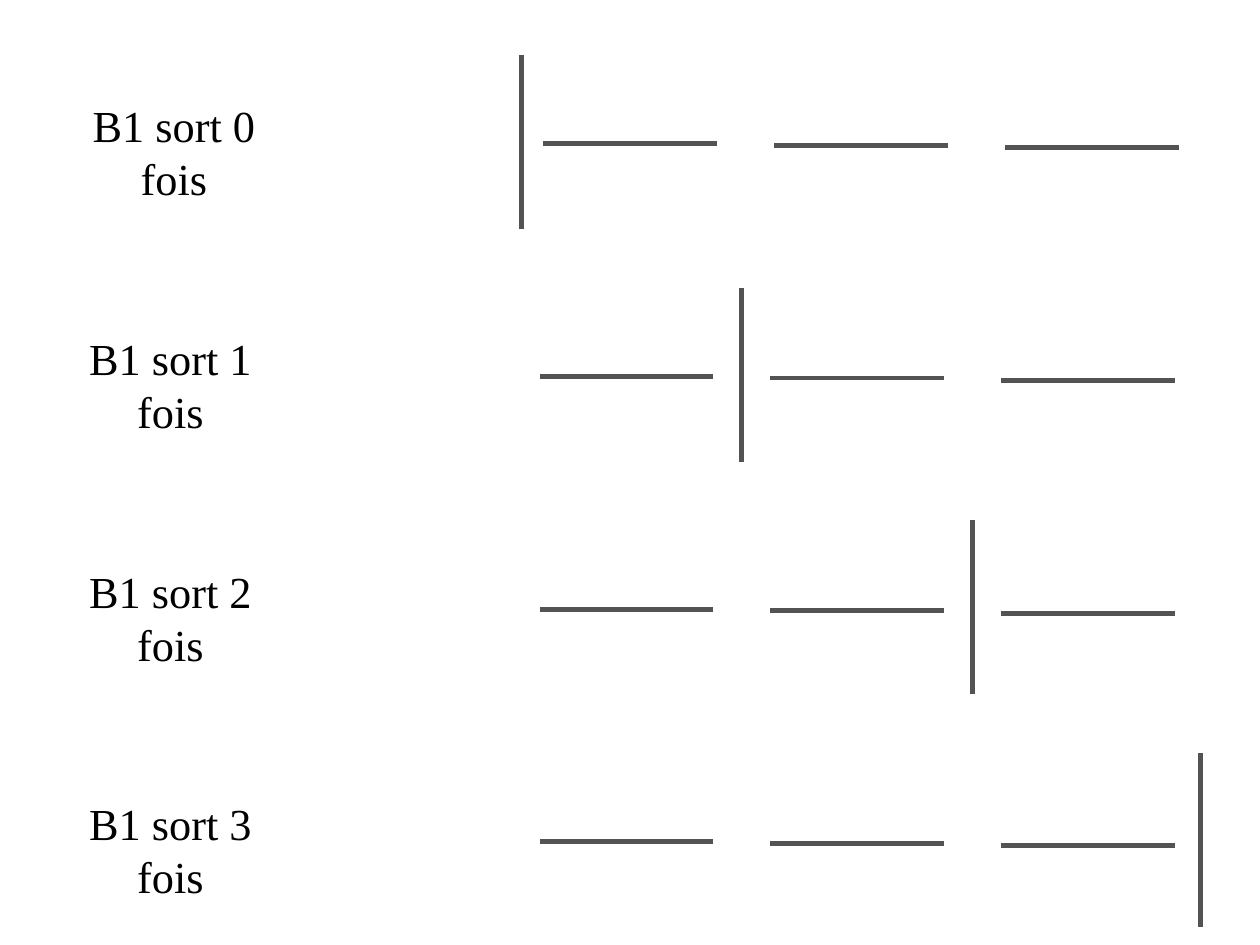
import pptx
import pptx.dml.color
import pptx.enum.shapes
import pptx.enum.text
import pptx.oxml.ns
import pptx.util
from lxml import etree

Pt = pptx.util.Pt

GREY = pptx.dml.color.RGBColor(0x53, 0x53, 0x53)
BLACK = pptx.dml.color.RGBColor(0, 0, 0)

# Lengths in points
ROW_PITCH = 189.1
FIRST_DASH_LEFT = 441.4
FIRST_ROW_SHIFT = 2.9
DASH_PITCH = 187.6
DASH_TOP = 116.8
DASH_DROPS = (0, 1.3, 3.4)
LINE_LENGTH = 141.2
BAR_TOP = 44.8
BAR_LEFTS = (424.1, 602.6, 790.6, 975.6)
LABEL_LEFT = 66.4
LABEL_TOP = 76.3


def add_line(shapes, left, top, width=0, height=0):
    """Draw a straight grey line without shadow."""
    line = shapes.add_connector(
        pptx.enum.shapes.MSO_CONNECTOR.STRAIGHT,
        Pt(left), Pt(top), Pt(left + width), Pt(top + height))
    line.line.color.rgb = GREY
    line.line.width = Pt(4)
    properties = line.element.find(pptx.oxml.ns.qn("p:spPr"))
    etree.SubElement(properties, pptx.oxml.ns.qn("a:effectLst"))


def add_text(shapes, text, left, top, width, height, *, size=36,
             font="Times New Roman", color=BLACK, spacing=43, inset=4.5):
    """Place centred text that wraps inside its box."""
    box = shapes.add_textbox(Pt(left), Pt(top), Pt(width), Pt(height))
    frame = box.text_frame
    frame.word_wrap = True
    frame.vertical_anchor = pptx.enum.text.MSO_ANCHOR.MIDDLE
    frame.margin_left = frame.margin_right = Pt(inset)
    frame.margin_top = frame.margin_bottom = Pt(inset)
    para = frame.paragraphs[0]
    para.alignment = pptx.enum.text.PP_ALIGN.CENTER
    para.line_spacing = Pt(spacing)
    span = para.add_run()
    span.text = text
    span.font.name = font
    span.font.size = Pt(size)
    span.font.color.rgb = color


def add_case(page, count, bar_left):
    """Group one row: three dashes, the separating bar and its label."""
    shapes = page.shapes.add_group_shape().shapes
    shift = 0 if count == 0 else -FIRST_ROW_SHIFT
    down = count * ROW_PITCH

    # Dashes
    for column, drop in enumerate(DASH_DROPS):
        add_line(shapes, FIRST_DASH_LEFT + shift + column * DASH_PITCH,
                 DASH_TOP + drop + down, width=LINE_LENGTH)

    # Bar after the first "count" dashes
    add_line(shapes, bar_left, BAR_TOP + down, height=LINE_LENGTH)

    # Label
    add_text(shapes, f"B1 sort {count} fois",
             LABEL_LEFT + shift, LABEL_TOP + down, 150, 94)


def main():
    deck = pptx.Presentation()
    deck.slide_width = Pt(1024)
    deck.slide_height = Pt(768)
    page = deck.slides.add_slide(deck.slide_layouts[6])
    for count, bar_left in enumerate(BAR_LEFTS):
        add_case(page, count, bar_left)
    deck.save("out.pptx")


if __name__ == "__main__":
    main()
